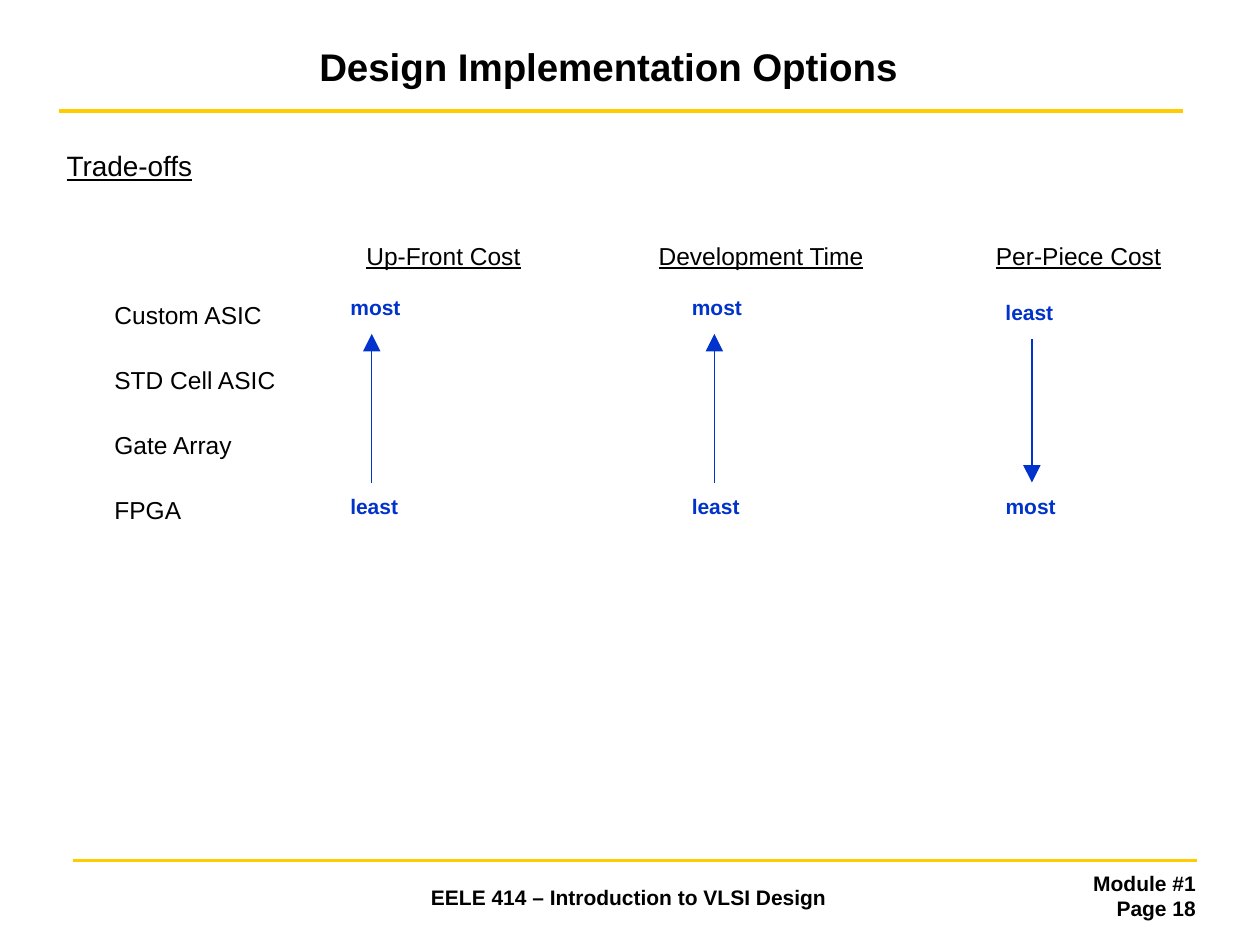
import pptx
import pptx.util
import pptx.dml.color
import pptx.enum.shapes
import pptx.enum.text
import pptx.oxml.ns
import lxml.etree

WIDTH, HEIGHT = 10, 7.5
FONT = "Arial"
COLORS = {"text": "000000", "trend": "0033CC", "rule": "FFCC00"}
ALIGN = pptx.enum.text.PP_ALIGN
INCH = pptx.util.Inches

OPTIONS = ["Custom ASIC", "STD Cell ASIC", "Gate Array", "FPGA"]
CRITERIA = [
    ("Up-Front Cost", 3.52, 2.95, 2.98, True),
    ("Development Time", 6.04, 5.67, 5.69, True),
    ("Per-Piece Cost", 8.56, 8.19, 8.18, False),
]
HEADING_TOP = 1.86
TOP_LABEL, BOTTOM_LABEL = 2.29, 3.87
ARROW_TOP, ARROW_BOTTOM = 2.65, 3.83
DOWNWARD_SHIFT = 0.04


def rgb(name):
    return pptx.dml.color.RGBColor.from_string(COLORS[name])


def format_text(frame, size, color="text", bold=False, underline=False,
                align=ALIGN.LEFT, gap=0):
    for index, paragraph in enumerate(frame.paragraphs):
        paragraph.alignment = align
        paragraph.space_before = pptx.util.Pt(gap if index else 0)
        for run in paragraph.runs:
            run.font.name = FONT
            run.font.size = pptx.util.Pt(size)
            run.font.bold = bold
            run.font.underline = underline
            run.font.color.rgb = rgb(color)


def add_text(slide, text, left, top, width, height, size, wrap=True, **style):
    box = slide.shapes.add_textbox(INCH(left), INCH(top), INCH(width), INCH(height))
    box.text_frame.word_wrap = wrap
    box.text_frame.text = text
    format_text(box.text_frame, size, **style)


def add_line(slide, start, end, color, weight, arrow=False):
    line = slide.shapes.add_connector(
        pptx.enum.shapes.MSO_CONNECTOR.STRAIGHT, *map(INCH, start + end))
    line.line.color.rgb = rgb(color)
    line.line.width = pptx.util.Pt(weight)
    if arrow:
        lxml.etree.SubElement(line.line._get_or_add_ln(),
                              pptx.oxml.ns.qn("a:tailEnd"),
                              type="triangle", w="lg", len="lg")
    lxml.etree.SubElement(line._element.spPr, pptx.oxml.ns.qn("a:effectLst"))


def add_title(slide, text):
    title = slide.shapes.title
    title.left, title.top = INCH(0.58), INCH(0.25)
    title.width, title.height = INCH(8.5), INCH(0.55)
    title.text_frame.text = text
    title.text_frame.vertical_anchor = pptx.enum.text.MSO_ANCHOR.MIDDLE
    format_text(title.text_frame, 22, bold=True, align=ALIGN.CENTER)


def add_frame(slide):
    rule_length = 0.892 * WIDTH
    for left, top in [(0.47, 0.88), (0.58, 6.83)]:
        add_line(slide, (left, top), (left + rule_length, top), "rule", 2)
    add_text(slide, "Module #1\vPage 18", 8.03, 6.86, 1.56, 0.5, 12,
             bold=True, align=ALIGN.RIGHT)
    add_text(slide, "EELE 414 – Introduction to VLSI Design", 2.68, 6.97, 4.62, 0.32,
             12, bold=True, align=ALIGN.CENTER)


def add_criterion(slide, heading, heading_center, arrow_x, label_center, rising):
    add_text(slide, heading, heading_center - 1, HEADING_TOP, 2, 0.32, 14,
             underline=True, align=ALIGN.CENTER)
    shift = 0 if rising else DOWNWARD_SHIFT
    upper, lower = ("most", "least") if rising else ("least", "most")
    for label, top in [(upper, TOP_LABEL + shift), (lower, BOTTOM_LABEL)]:
        width = 0.6 if label == "most" else 0.58
        add_text(slide, label, label_center - 0.3, top, width, 0.3, 12, wrap=False,
                 color="trend", bold=True, align=ALIGN.CENTER)
    ends = [(arrow_x, ARROW_TOP + shift), (arrow_x, ARROW_BOTTOM)]
    if rising:
        ends.reverse()
    add_line(slide, *ends, "trend", 0.75, arrow=True)


def main():
    deck = pptx.Presentation()
    deck.slide_width, deck.slide_height = INCH(WIDTH), INCH(HEIGHT)
    slide = deck.slides.add_slide(deck.slide_layouts[5])
    add_frame(slide)
    add_title(slide, "Design Implementation Options")
    add_text(slide, "Trade-offs", 0.43, 1.13, 2, 0.35, 16, underline=True)
    add_text(slide, "\n".join(OPTIONS), 0.81, 2.33, 1.8, 1.85, 14, gap=20.4)
    for criterion in CRITERIA:
        add_criterion(slide, *criterion)
    deck.save("out.pptx")


if __name__ == "__main__":
    main()
